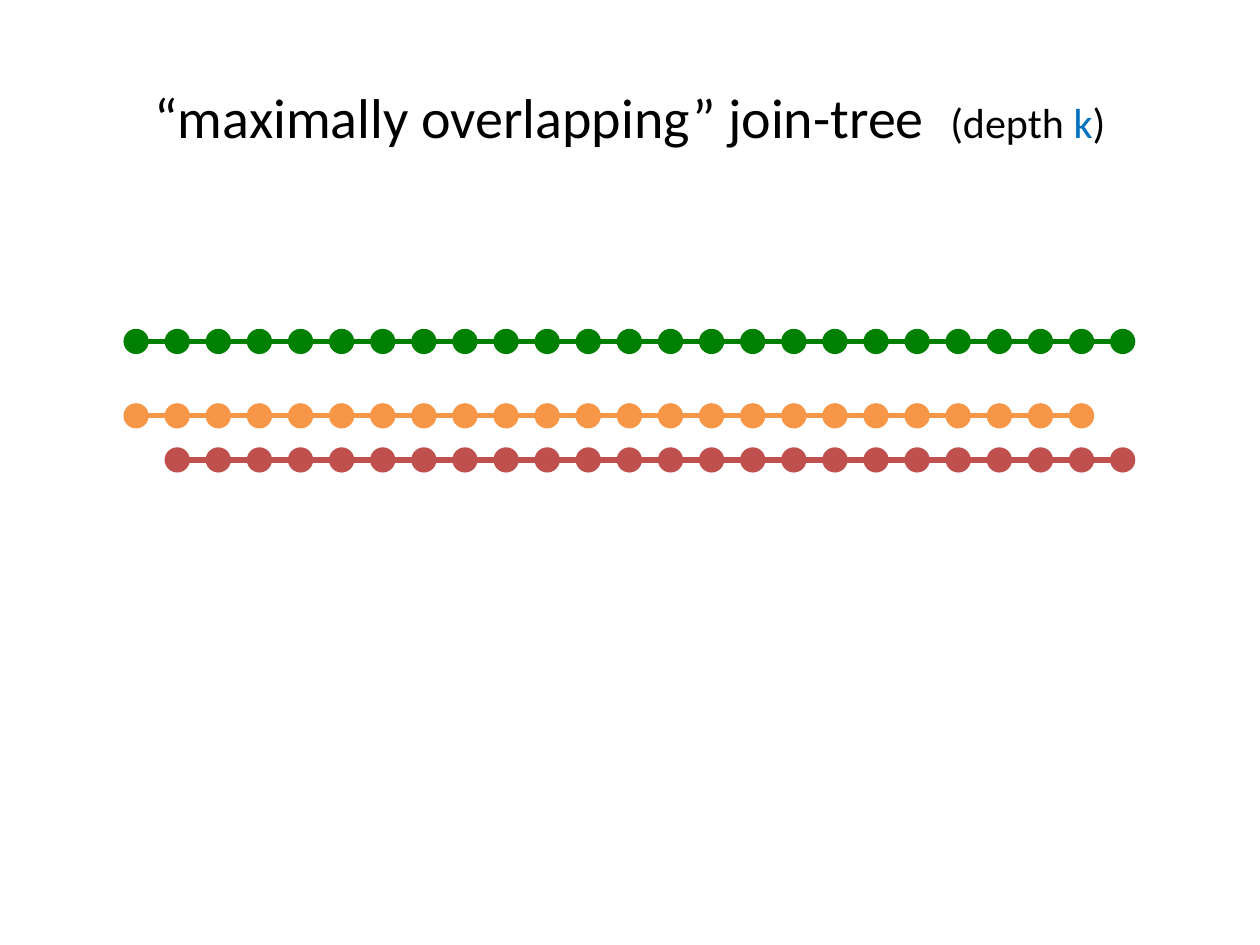
"""Build a slide with three overlapping chains of nodes under a title."""
from lxml.etree import SubElement
from pptx import Presentation
from pptx.dml.color import RGBColor
from pptx.enum.shapes import MSO_CONNECTOR, MSO_SHAPE
from pptx.enum.text import MSO_ANCHOR, PP_ALIGN
from pptx.oxml.ns import qn
from pptx.util import Inches, Pt


def color(hex_text):
    return RGBColor.from_string(hex_text)


deck = Presentation()
deck.slide_width, deck.slide_height = Inches(10), Inches(7.5)
slide = deck.slides.add_slide(deck.slide_layouts[5])

title = slide.shapes.title
title.left, title.top = Inches(0.5), Inches(0.3)
title.width, title.height = Inches(9), Inches(1.25)
title.text_frame.vertical_anchor = MSO_ANCHOR.MIDDLE
para = title.text_frame.paragraphs[0]
para.alignment = PP_ALIGN.CENTER
for text, size, hue in [
    ("“maximally overlapping” join-tree  ", 32, "000000"),
    ("(depth ", 24, "000000"),
    ("k", 24, "0070C0"),
    (")", 24, "000000"),
]:
    span = para.add_run()
    span.text = text
    span.font.name = "Calibri"
    span.font.size = Pt(size)
    span.font.color.rgb = color(hue)

diameter = 0.19
last_node = 24
first_center, last_center = 1.08, 8.91
pitch = (last_center - first_center) / last_node

for hue, center_y, start, stop, line_end in [
    ("008000", 2.71, 0, last_node, 9.01),
    ("F79646", 3.3, 0, last_node - 1, 8.68),
    ("C0504D", 3.65, 1, last_node, 9.01),
]:
    chain = slide.shapes.add_group_shape()
    link = chain.shapes.add_connector(
        MSO_CONNECTOR.STRAIGHT,
        Inches(first_center + start * pitch), Inches(center_y),
        Inches(line_end), Inches(center_y),
    )
    link.line.color.rgb = color(hue)
    link.line.width = Pt(3)
    SubElement(link._element.spPr, qn("a:effectLst"))
    for index in range(start, stop + 1):
        node = chain.shapes.add_shape(
            MSO_SHAPE.OVAL,
            Inches(first_center + index * pitch - diameter / 2),
            Inches(center_y - diameter / 2),
            Inches(diameter), Inches(diameter),
        )
        node.shadow.inherit = False
        node.fill.solid()
        node.fill.fore_color.rgb = color(hue)
        node.line.color.rgb = color(hue)
        node.line.width = Pt(0.75)

deck.save("out.pptx")
